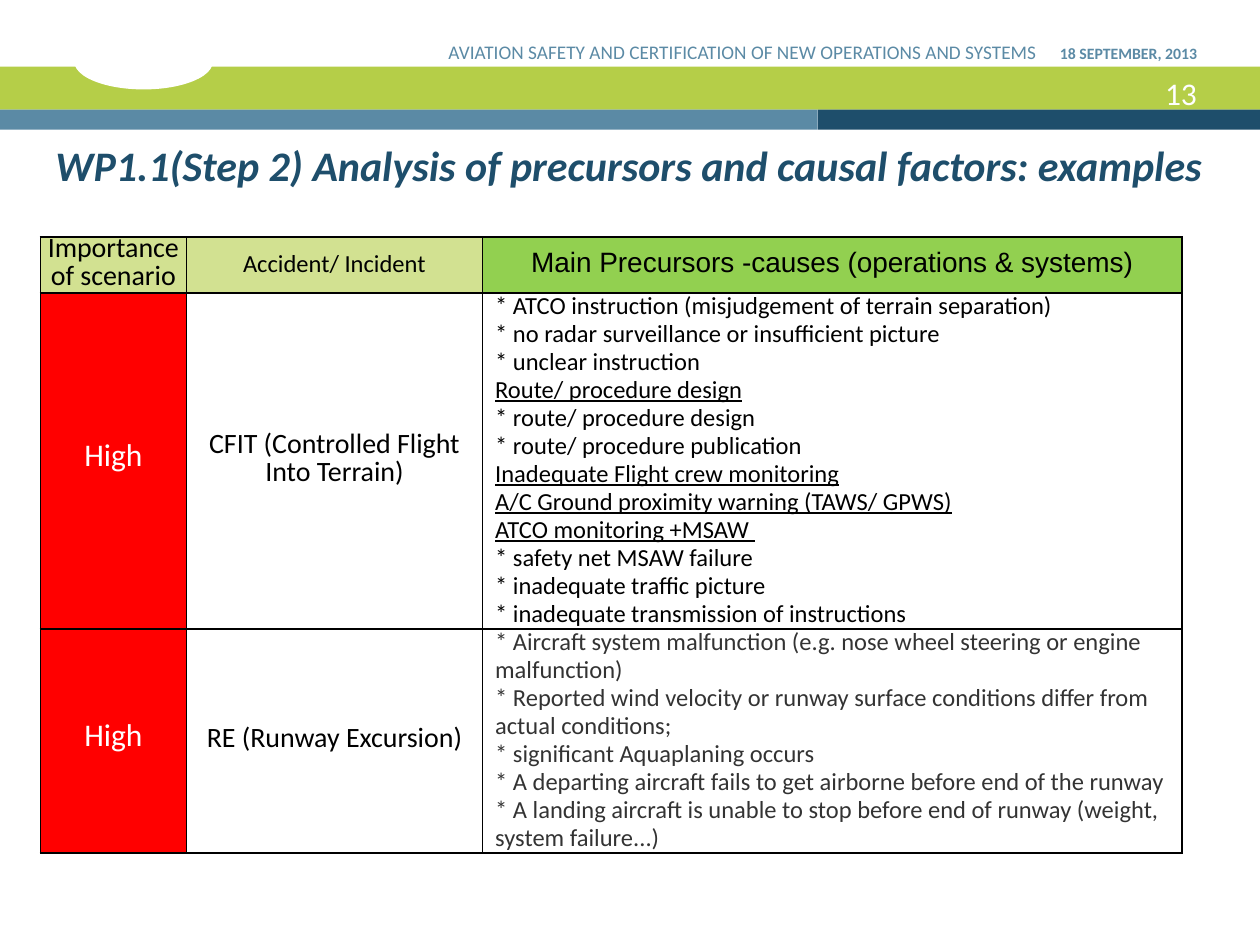
from lxml.etree import SubElement
from pptx import Presentation
from pptx.dml.color import RGBColor
from pptx.enum.shapes import MSO_SHAPE
from pptx.enum.text import MSO_ANCHOR, PP_ALIGN
from pptx.oxml.ns import qn
from pptx.util import Inches, Pt

COLORS = {
    "white": "FFFFFF", "black": "000000", "grey": "333333", "lime": "B5CE48",
    "navy": "1E4E6B", "steel": "5B8AA5", "pale": "D2E191", "green": "92D050",
    "red": "FF0000",
}
TITLE = "WP1.1(Step 2) Analysis of precursors and causal factors: examples"

# Header band: shape, left, top, width, height, colour
BANDS = [
    (MSO_SHAPE.RECTANGLE, 0, 0.53, 10, 0.34, "lime"),
    (MSO_SHAPE.RECTANGLE, 6.49, 0.87, 3.51, 0.16, "navy"),
    (MSO_SHAPE.RECTANGLE, 0, 0.87, 6.49, 0.16, "steel"),
    (MSO_SHAPE.OVAL, 0.59, 0.27, 1.1, 0.44, "white"),
]
# Header texts: text, left, top, width, height, size, colour, bold
LABELS = [
    ("13", 8.67, 0.54, 0.83, 0.4, 18, "white", False),
    ("18 SEPTEMBER, 2013", 8.31, 0.05, 1.19, 0.5, 9, "steel", True),
    ("AVIATION SAFETY AND CERTIFICATION OF NEW OPERATIONS AND SYSTEMS",
     2.95, 0.05, 5.28, 0.5, 11, "steel", False),
]

# Table content
CFIT_CAUSES = [
    "* ATCO instruction (misjudgement of terrain separation)",
    "* no radar surveillance or insufficient picture",
    "* unclear instruction",
    "Route/ procedure design",
    "* route/ procedure design",
    "* route/ procedure publication",
    "Inadequate Flight crew monitoring",
    "A/C Ground proximity warning (TAWS/ GPWS)",
    "ATCO monitoring +MSAW ",
    "* safety net MSAW failure",
    "* inadequate traffic picture",
    "* inadequate transmission of instructions",
]
RE_CAUSES = [
    "* Aircraft system malfunction (e.g. nose wheel steering or engine malfunction)",
    "* Reported wind velocity or runway surface conditions differ from actual conditions;",
    "* significant Aquaplaning occurs",
    "* A departing aircraft fails to get airborne before end of the runway",
    "* A landing aircraft is unable to stop before end of runway (weight, system failure...)",
]
# Each cell: lines, size, text colour, fill, font
ROWS = [
    [(["Importance of scenario"], 16, "black", "pale", "Calibri"),
     (["Accident/ Incident"], 14, "black", "pale", "Calibri"),
     (["Main Precursors -causes (operations & systems)"], 16, "black", "green", "Arial")],
    [(["High"], 18, "white", "red", "Calibri"),
     (["CFIT (Controlled Flight Into Terrain)"], 16, "black", None, "Calibri"),
     (CFIT_CAUSES, 14, "black", None, "Calibri")],
    [(["High"], 18, "white", "red", "Calibri"),
     (["RE (Runway Excursion)"], 16, "black", None, "Calibri"),
     (RE_CAUSES, 14, "grey", None, "Calibri")],
]
COLUMN_WIDTHS = [1.16, 2.35, 5.55]
ROW_LINES = [2, 12, 8]
LINE = Pt(16)


def rgb(name):
    return RGBColor.from_string(COLORS[name])


def style(p, size, color, font="Calibri", **flags):
    for r in p.runs:
        r.font.size, r.font.name = Pt(size), font
        r.font.color.rgb = rgb(color)
        for flag, value in flags.items():
            setattr(r.font, flag, value)


def add_borders(cell):
    tc_pr = cell._tc.get_or_add_tcPr()
    for side in ("a:lnL", "a:lnR", "a:lnT", "a:lnB"):
        ln = SubElement(tc_pr, qn(side), w=str(Pt(1)))
        fill = SubElement(ln, qn("a:solidFill"))
        SubElement(fill, qn("a:srgbClr"), val=COLORS["black"])


def fill_cell(cell, lines, size, color, fill, font):
    is_list = len(lines) > 1
    add_borders(cell)
    if fill:
        cell.fill.solid()
        cell.fill.fore_color.rgb = rgb(fill)
    else:
        cell.fill.background()
    cell.margin_top = cell.margin_bottom = 0
    cell.margin_left = Inches(0.1 if is_list else 0.01)
    cell.margin_right = Inches(0.01)
    cell.vertical_anchor = MSO_ANCHOR.TOP if is_list else MSO_ANCHOR.MIDDLE
    cell.text_frame.text = "\n".join(lines)
    for p in cell.text_frame.paragraphs:
        p.alignment = PP_ALIGN.LEFT if is_list else PP_ALIGN.CENTER
        p.line_spacing = LINE
        # Group headings in a list carry no asterisk and are underlined
        style(p, size, color, font,
              underline=is_list and not p.text.startswith("*"))


prs = Presentation()
prs.slide_width, prs.slide_height = Inches(10), Inches(7.5)
s = prs.slides.add_slide(prs.slide_layouts[5])

# Header band and labels
for kind, *box, color in BANDS:
    sp = s.shapes.add_shape(kind, *map(Inches, box))
    sp.shadow.inherit = False
    sp.fill.solid()
    sp.fill.fore_color.rgb = rgb(color)
    sp.line.fill.background()

for text, *box, size, color, bold in LABELS:
    tf = s.shapes.add_textbox(*map(Inches, box)).text_frame
    tf.word_wrap = True
    tf.margin_right = 0
    tf.vertical_anchor = MSO_ANCHOR.BOTTOM
    tf.text = text
    tf.paragraphs[0].alignment = PP_ALIGN.RIGHT
    style(tf.paragraphs[0], size, color, bold=bold)

# Title
title = s.shapes.title
title.left, title.top, title.width, title.height = map(Inches, (0.34, 1.06, 9.46, 0.5))
tf = title.text_frame
tf.text = TITLE
tf.vertical_anchor = MSO_ANCHOR.BOTTOM
tf.paragraphs[0].alignment = PP_ALIGN.LEFT
style(tf.paragraphs[0], 24, "navy", bold=True, italic=True)

# Table: each row is as tall as its lines of text
table = s.shapes.add_table(
    len(ROWS), len(COLUMN_WIDTHS), Inches(0.32), Inches(1.88),
    Inches(sum(COLUMN_WIDTHS)), LINE * sum(ROW_LINES)).table
table.first_row = table.horz_banding = False
for column, width in zip(table.columns, COLUMN_WIDTHS):
    column.width = Inches(width)
for row, count, contents in zip(table.rows, ROW_LINES, ROWS):
    row.height = LINE * count
    for cell, content in zip(row.cells, contents):
        fill_cell(cell, *content)

prs.save("out.pptx")
